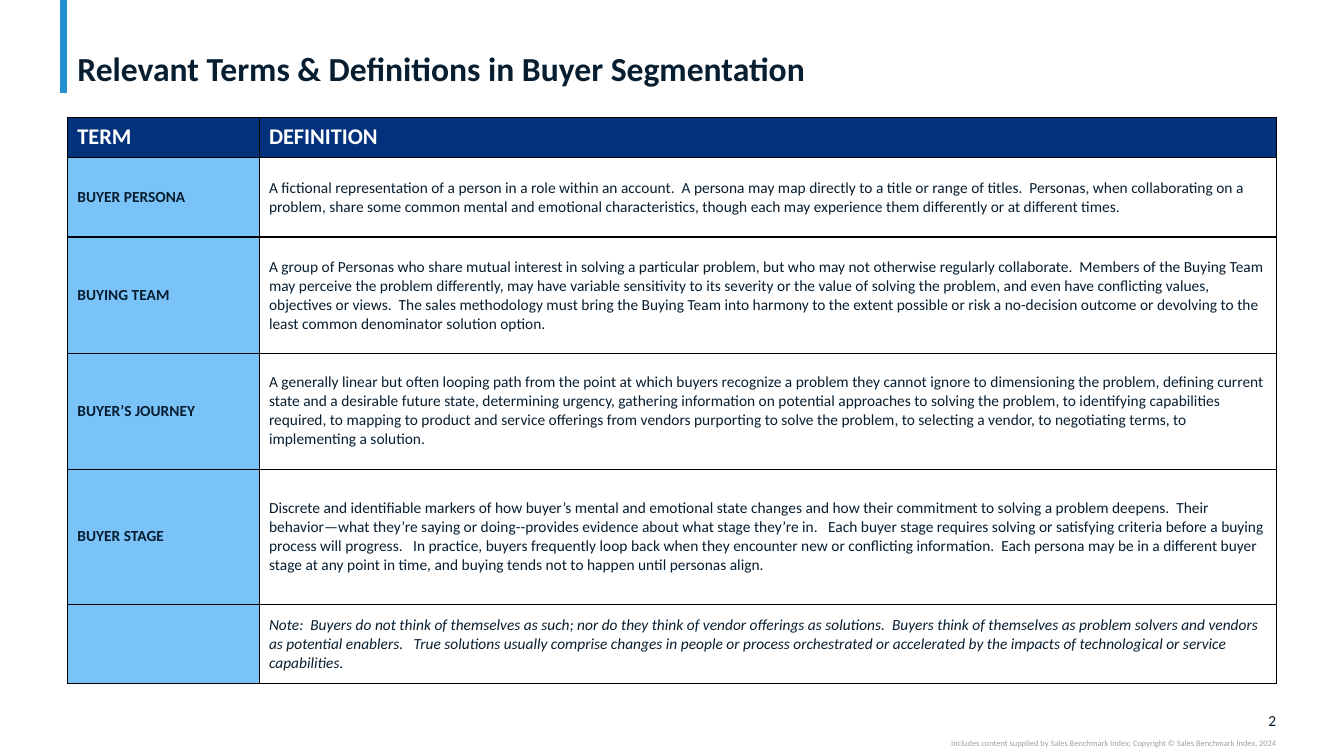
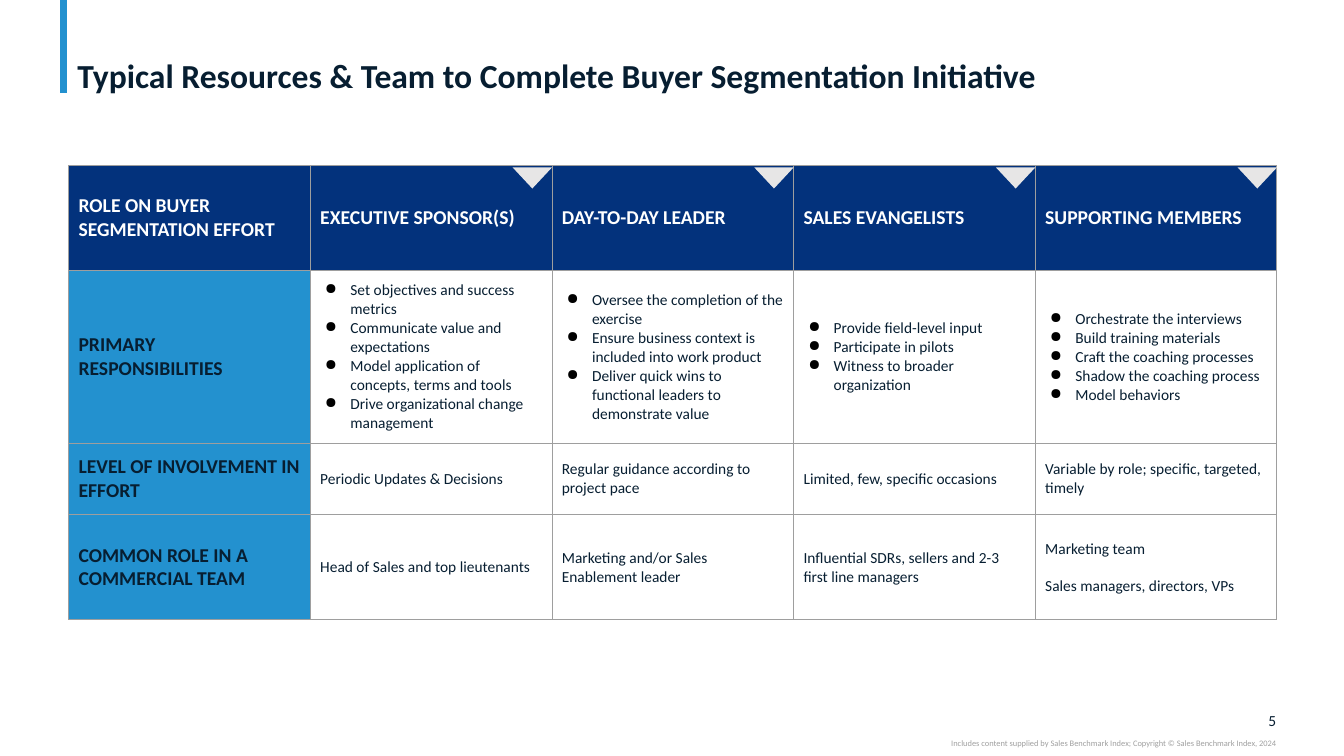
from lxml import etree
from pptx import Presentation
from pptx.dml.color import RGBColor
from pptx.enum.shapes import MSO_CONNECTOR, MSO_SHAPE
from pptx.enum.text import MSO_ANCHOR, MSO_AUTO_SIZE, PP_ALIGN
from pptx.oxml.ns import qn
from pptx.util import Cm, Pt

# Shared look
TOP, MIDDLE, BOTTOM = MSO_ANCHOR.TOP, MSO_ANCHOR.MIDDLE, MSO_ANCHOR.BOTTOM
LEFT, RIGHT = PP_ALIGN.LEFT, PP_ALIGN.RIGHT
NO_AUTOFIT = MSO_AUTO_SIZE.NONE
STRAIGHT, TRIANGLE = MSO_CONNECTOR.STRAIGHT, MSO_SHAPE.ISOSCELES_TRIANGLE

INK = RGBColor(0x07, 0x1E, 0x31)
NAVY = RGBColor(0x03, 0x32, 0x7C)
BLUE = RGBColor(0x23, 0x91, 0xCF)
SKY = RGBColor(0x7A, 0xC3, 0xF8)
WHITE = RGBColor(0xFF, 0xFF, 0xFF)
BLACK = RGBColor(0x00, 0x00, 0x00)
RULE_GREY = RGBColor(0x9E, 0x9E, 0x9E)
FOOTER_GREY = RGBColor(0xA0, 0xA0, 0xA0)
CORNER_GREY = RGBColor(0xE7, 0xE6, 0xE6)

FONT = "Calibri"
BODY_SIZE = 11
COPYRIGHT = ("Includes content supplied by Sales Benchmark Index; "
             "Copyright © Sales Benchmark Index, 2024")

# Slide 1 content
TERMS_TITLE = "Relevant Terms & Definitions in Buyer Segmentation"
TERMS_HEADER = ("TERM", "DEFINITION")
TERMS = [
    ("BUYER PERSONA",
     "A fictional representation of a person in a role within an account.  "
     "A persona may map directly to a title or range of titles.  Personas, "
     "when collaborating on a problem, share some common mental and emotional "
     "characteristics, though each may experience them differently or at "
     "different times."),
    ("BUYING TEAM",
     "A group of Personas who share mutual interest in solving a particular "
     "problem, but who may not otherwise regularly collaborate.  Members of "
     "the Buying Team may perceive the problem differently, may have variable "
     "sensitivity to its severity or the value of solving the problem, and "
     "even have conflicting values, objectives or views.  The sales "
     "methodology must bring the Buying Team into harmony to the extent "
     "possible or risk a no-decision outcome or devolving to the least common "
     "denominator solution option."),
    ("BUYER’S JOURNEY",
     "A generally linear but often looping path from the point at which "
     "buyers recognize a problem they cannot ignore to dimensioning the "
     "problem, defining current state and a desirable future state, "
     "determining urgency, gathering information on potential approaches to "
     "solving the problem, to identifying capabilities required, to mapping "
     "to product and service offerings from vendors purporting to solve the "
     "problem, to selecting a vendor, to negotiating terms, to implementing a "
     "solution."),
    ("BUYER STAGE",
     "Discrete and identifiable markers of how buyer’s mental and emotional "
     "state changes and how their commitment to solving a problem deepens.  "
     "Their behavior—what they’re saying or doing--provides evidence about "
     "what stage they’re in.   Each buyer stage requires solving or "
     "satisfying criteria before a buying process will progress.   In "
     "practice, buyers frequently loop back when they encounter new or "
     "conflicting information.  Each persona may be in a different buyer "
     "stage at any point in time, and buying tends not to happen until "
     "personas align."),
    ("",
     "Note:  Buyers do not think of themselves as such; nor do they think of "
     "vendor offerings as solutions.  Buyers think of themselves as problem "
     "solvers and vendors as potential enablers.   True solutions usually "
     "comprise changes in people or process orchestrated or accelerated by "
     "the impacts of technological or service capabilities."),
]
TERMS_COLUMNS = (4.83, 25.63)
TERMS_ROWS = (1.02, 2.01, 2.92, 2.92, 3.4, 2.01)

# Slide 2 content: a list is bulleted, a tuple is spaced paragraphs
TEAM_TITLE = "Typical Resources & Team to Complete Buyer Segmentation Initiative"
TEAM_HEADER = ("ROLE ON BUYER SEGMENTATION EFFORT", "EXECUTIVE SPONSOR(S)",
               "DAY-TO-DAY LEADER", "SALES EVANGELISTS", "SUPPORTING MEMBERS")
TEAM = [
    ("PRIMARY RESPONSIBILITIES",
     ["Set objectives and success metrics",
      "Communicate value and expectations",
      "Model application of concepts, terms and tools",
      "Drive organizational change management"],
     ["Oversee the completion of the exercise",
      "Ensure business context is included into work product",
      "Deliver quick wins to functional leaders to demonstrate value"],
     ["Provide field-level input",
      "Participate in pilots",
      "Witness to broader organization"],
     ["Orchestrate the interviews",
      "Build training materials",
      "Craft the coaching processes",
      "Shadow the coaching process",
      "Model behaviors"]),
    ("LEVEL OF INVOLVEMENT IN EFFORT",
     "Periodic Updates & Decisions",
     "Regular guidance according to project pace",
     "Limited, few, specific occasions",
     "Variable by role; specific, targeted, timely"),
    ("COMMON ROLE IN A COMMERCIAL TEAM",
     "Head of Sales and top lieutenants",
     "Marketing and/or Sales Enablement leader",
     "Influential SDRs, sellers and 2-3 first line managers",
     ("Marketing team", "Sales managers, directors, VPs")),
]
TEAM_LEFT, TEAM_TOP = 1.73, 4.17
TEAM_COLUMNS = (6.09,) * len(TEAM_HEADER)
TEAM_ROWS = (2.64, 4.36, 1.8, 2.65)
CORNER_WIDTH, CORNER_HEIGHT = 0.99, 0.53


def apply(target, values):
    for name, value in values.items():
        setattr(target, name, value)


def set_margins(target, across, down):
    apply(target, {"margin_left": Cm(across), "margin_right": Cm(across),
                   "margin_top": Cm(down), "margin_bottom": Cm(down)})


def add_bullet(paragraph):
    properties = paragraph._p.get_or_add_pPr()
    properties.set("marL", str(Cm(0.76)))
    properties.set("indent", str(-Cm(0.64)))
    colour = etree.SubElement(properties, qn("a:buClr"))
    etree.SubElement(colour, qn("a:srgbClr"), val=str(BLACK))
    etree.SubElement(properties, qn("a:buChar"), char="●")


def write(frame, content, size, colour, bold=False, italic=False, align=LEFT):
    lines = [content] if isinstance(content, str) else content
    for index, line in enumerate(lines):
        paragraph = frame.add_paragraph() if index else frame.paragraphs[0]
        paragraph.alignment = align
        if isinstance(content, list):
            add_bullet(paragraph)
        elif index:
            paragraph.space_before = Pt(13)
        if line:
            run = paragraph.add_run()
            run.text = line
            apply(run.font, {"name": FONT, "size": Pt(size),
                             "bold": bold, "italic": italic})
            run.font.color.rgb = colour


def add_label(slide, box, content, size, colour, anchor):
    frame = slide.shapes.add_textbox(*map(Cm, box)).text_frame
    apply(frame, {"word_wrap": True, "vertical_anchor": anchor})
    set_margins(frame, 0, 0)
    write(frame, content, size, colour, align=RIGHT)


def add_page(deck, title, title_top, number):
    slide = deck.slides.add_slide(deck.slide_layouts[5])

    # Accent bar
    bar = slide.shapes.add_connector(STRAIGHT, Cm(1.6), Cm(0), Cm(1.6), Cm(2.34))
    bar.line.color.rgb = BLUE
    bar.line.width = Pt(5)
    etree.SubElement(bar._element.spPr, qn("a:effectLst"))

    # Title
    heading = slide.shapes.title
    apply(heading, {"left": Cm(1.7), "top": Cm(title_top),
                    "width": Cm(30.45), "height": Cm(2.13)})
    frame = heading.text_frame
    apply(frame, {"word_wrap": True, "vertical_anchor": BOTTOM,
                  "auto_size": NO_AUTOFIT})
    set_margins(frame, 0.25, 0)
    write(frame, title, 24, INK, bold=True)
    frame.paragraphs[0].line_spacing = 0.9

    # Footer
    add_label(slide, (31.29, 17.91, 0.87, 0.48), number, 11, INK, MIDDLE)
    add_label(slide, (19.05, 18.59, 13.11, 0.25), COPYRIGHT, 6, FOOTER_GREY, TOP)
    return slide


def set_borders(cell, colour, widths):
    properties = cell._tc.get_or_add_tcPr()
    for index, (side, width) in enumerate(zip("LRTB", widths)):
        line = etree.Element(qn(f"a:ln{side}"), w=str(Pt(width)))
        fill = etree.SubElement(line, qn("a:solidFill"))
        etree.SubElement(fill, qn("a:srgbClr"), val=str(colour))
        properties.insert(index, line)


def add_grid(slide, origin, columns, heights, rows, look):
    """Draw a table with a navy header row and a tinted first column."""
    box = (*origin, sum(columns), sum(heights))
    table = slide.shapes.add_table(len(rows), len(columns), *map(Cm, box)).table
    apply(table, {"first_row": False, "horz_banding": False})
    for column, width in zip(table.columns, columns):
        column.width = Cm(width)
    for row, height in zip(table.rows, heights):
        row.height = Cm(height)

    for r, row in enumerate(rows):
        for c, content in enumerate(row):
            cell = table.cell(r, c)
            cell.vertical_anchor = MIDDLE
            set_margins(cell, 0.25, look["padding"])
            if r == 0:
                fill, size, colour = NAVY, look["header_size"], WHITE
            elif c == 0:
                fill, size, colour = look["label_fill"], look["label_size"], INK
            else:
                fill, size, colour = WHITE, BODY_SIZE, INK
            cell.fill.solid()
            cell.fill.fore_color.rgb = fill
            write(cell.text_frame, content, size, colour, bold=r == 0 or c == 0,
                  italic="Note:" in content)
            above, below = (1.5 if edge == look["heavy_edge"] else 0.75
                            for edge in (r, r + 1))
            set_borders(cell, look["rule"], (0.75, 0.75, above, below))


def add_corners(slide):
    """Put a folded corner at the right end of each role heading."""
    right = TEAM_LEFT + TEAM_COLUMNS[0]
    for width in TEAM_COLUMNS[1:]:
        right += width
        box = (right - CORNER_WIDTH, TEAM_TOP + 0.05, CORNER_WIDTH, CORNER_HEIGHT)
        corner = slide.shapes.add_shape(TRIANGLE, *map(Cm, box))
        corner.rotation = 180
        corner.shadow.inherit = False
        corner.fill.solid()
        corner.fill.fore_color.rgb = CORNER_GREY
        corner.line.fill.background()


def main():
    deck = Presentation()
    apply(deck, {"slide_width": Cm(33.87), "slide_height": Cm(19.05)})

    # Terms and definitions
    terms = add_page(deck, TERMS_TITLE, 0.1, "2")
    add_grid(terms, (1.7, 2.95), TERMS_COLUMNS, TERMS_ROWS, [TERMS_HEADER, *TERMS],
             {"padding": 0.13, "header_size": 16, "label_size": 11,
              "label_fill": SKY, "rule": BLACK, "heavy_edge": 2})

    # Resources and team
    team = add_page(deck, TEAM_TITLE, 0.28, "5")
    add_grid(team, (TEAM_LEFT, TEAM_TOP), TEAM_COLUMNS, TEAM_ROWS,
             [TEAM_HEADER, *TEAM],
             {"padding": 0.25, "header_size": 14, "label_size": 14,
              "label_fill": BLUE, "rule": RULE_GREY, "heavy_edge": None})
    add_corners(team)

    deck.save("out.pptx")


if __name__ == "__main__":
    main()
